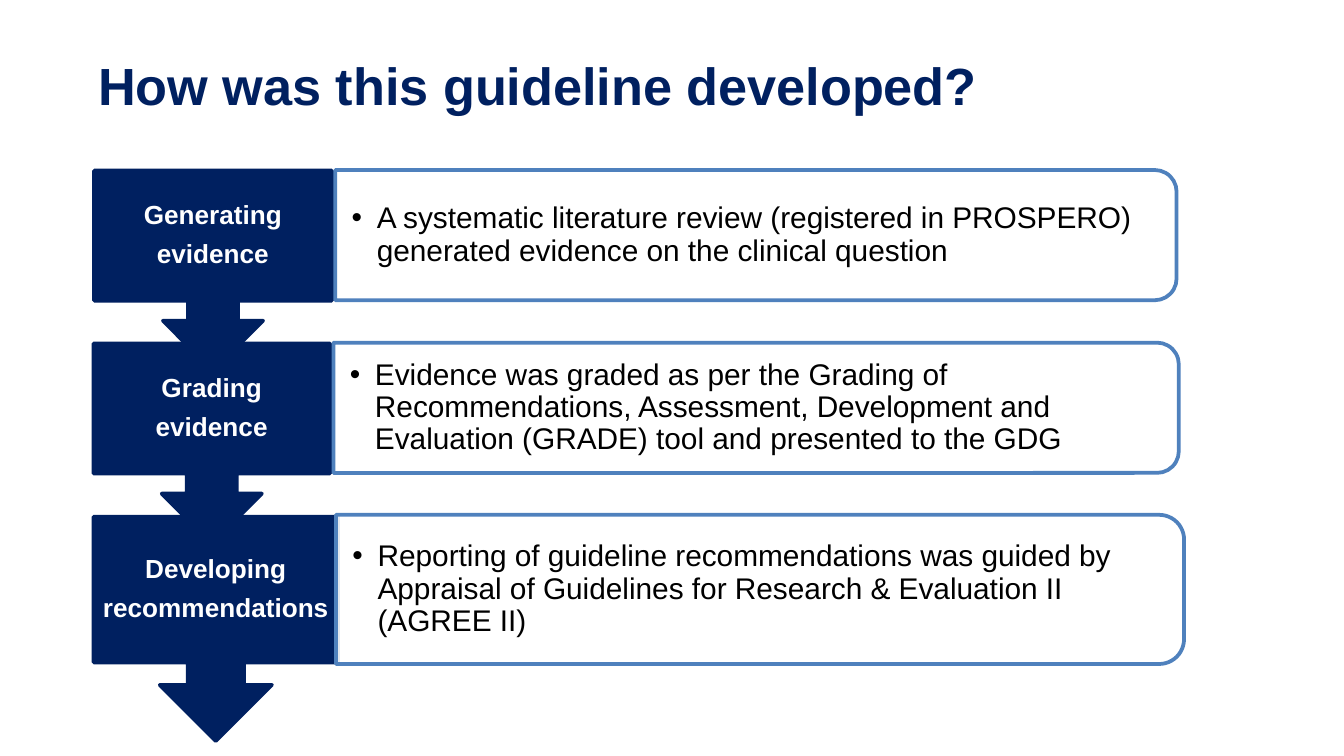
from lxml.etree import SubElement
from pptx import Presentation
from pptx.dml.color import RGBColor
from pptx.enum.shapes import MSO_SHAPE
from pptx.enum.text import MSO_ANCHOR, PP_ALIGN
from pptx.oxml.ns import qn
from pptx.util import Pt

NAVY = RGBColor(0x00, 0x20, 0x60)
BLUE = RGBColor(0x4F, 0x81, 0xBD)
WHITE = RGBColor(0xFF, 0xFF, 0xFF)
BLACK = RGBColor(0x00, 0x00, 0x00)

# Heading lines, text, callout box, panel box (left, top, width, height)
STAGES = [
    (["Generating", "evidence"],
     "A systematic literature review (registered in PROSPERO) "
     "generated evidence on the clinical question",
     (50.4, 91.4, 127.4, 107.3), (179.6, 91.1, 450.7, 69.8)),
    (["Grading", "evidence"],
     "Evidence was graded as per the Grading of Recommendations, Assessment, "
     "Development and Evaluation (GRADE) tool and presented to the GDG",
     (50.1, 184, 126.7, 107.3), (178.6, 183.6, 452.9, 69.8)),
    (["Developing", "recommendations"],
     "Reporting of guideline recommendations was guided by Appraisal of "
     "Guidelines for Research & Evaluation II (AGREE II)",
     (50.1, 276.8, 131, 120.2), (180, 275.8, 454.3, 79.9)),
]
CALLOUT_BODY = 0.65  # share of the callout above its arrow
PANEL_INSET = 3.4


def write_text(frame, lines, size, color, bold=False, align=PP_ALIGN.LEFT,
               line_spacing=1.0, space_after=0, indent=0):
    """Fill a frame with one paragraph per line; an indent brings a bullet."""
    for number, line in enumerate(lines):
        paragraph = frame.add_paragraph() if number else frame.paragraphs[0]
        paragraph.alignment = align
        paragraph.line_spacing = line_spacing
        paragraph.space_after = Pt(space_after)
        if indent:
            properties = paragraph._p.get_or_add_pPr()
            properties.set("marL", str(Pt(indent)))
            properties.set("indent", str(-Pt(indent)))
            SubElement(properties, qn("a:buFont"), typeface="Arial")
            SubElement(properties, qn("a:buChar"), char="•")
        run = paragraph.add_run()
        run.text = line
        run.font.name = "Arial"
        run.font.size = Pt(size)
        run.font.bold = bold
        run.font.color.rgb = color


class GuidelineSlide:
    """Holds the current slide and the style of its elements."""

    outline_width = 2

    def __init__(self, presentation):
        self.slide = presentation.slides.add_slide(presentation.slide_layouts[6])

    def text(self, box, lines, anchor=MSO_ANCHOR.MIDDLE, margin=0.7,
             left_margin=0.7, **text_format):
        frame = self.slide.shapes.add_textbox(*map(Pt, box)).text_frame
        frame.word_wrap = True
        frame.vertical_anchor = anchor
        frame.margin_left = Pt(left_margin)
        frame.margin_top = frame.margin_right = frame.margin_bottom = Pt(margin)
        write_text(frame, lines, **text_format)

    def turned_shape(self, preset, box, fill, outline):
        """Draw a preset turned a quarter clockwise so that it covers box."""
        left, top, width, height = box
        shift = (width - height) / 2
        shape = self.slide.shapes.add_shape(
            preset, Pt(left + shift), Pt(top - shift), Pt(height), Pt(width))
        shape.rotation = 90
        shape.shadow.inherit = False
        shape.fill.solid()
        shape.fill.fore_color.rgb = fill
        shape.line.color.rgb = outline
        shape.line.width = Pt(self.outline_width)
        SubElement(shape.line._get_or_add_ln(), qn("a:round"))
        return shape

    def title(self, words):
        self.text((52.6, 12.2, 611.3, 49.7), [words], anchor=MSO_ANCHOR.BOTTOM,
                  margin=0, left_margin=0, size=28, color=NAVY, bold=True)

    def callout(self, box, heading):
        left, top, width, height = box
        self.turned_shape(MSO_SHAPE.RIGHT_ARROW_CALLOUT, box, NAVY, NAVY)
        self.text((left, top, width, height * CALLOUT_BODY), heading,
                  size=14, color=WHITE, bold=True, align=PP_ALIGN.CENTER,
                  line_spacing=0.9, space_after=5.6)

    def panel(self, box, words):
        left, top, width, height = box
        panel = self.turned_shape(
            MSO_SHAPE.ROUND_2_SAME_RECTANGLE, box, WHITE, BLUE)
        color = panel.fill._xPr.find(qn("a:solidFill"))[0]
        SubElement(color, qn("a:alpha"), val="90000")
        self.text((left, top + PANEL_INSET, width - PANEL_INSET,
                   height - 2 * PANEL_INSET), [words], left_margin=8.8,
                  size=16, color=BLACK, line_spacing=0.9, space_after=2.7,
                  indent=13.5)


def main():
    presentation = Presentation()
    presentation.slide_width = Pt(720)
    presentation.slide_height = Pt(405)
    slide = GuidelineSlide(presentation)
    slide.title("How was this guideline developed?")
    for heading, words, callout_box, panel_box in STAGES:
        slide.callout(callout_box, heading)
        slide.panel(panel_box, words)
    presentation.save("out.pptx")


if __name__ == "__main__":
    main()
